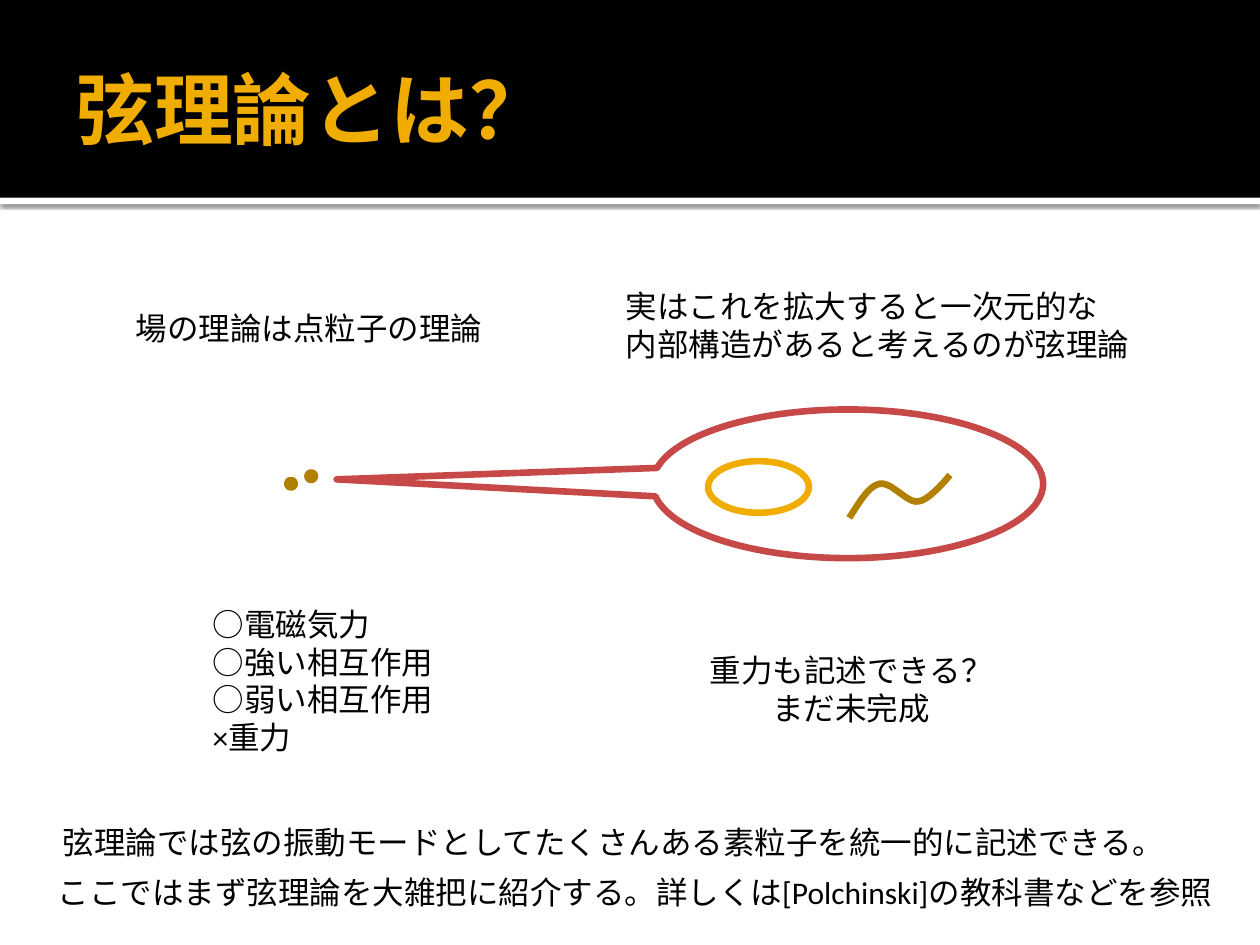
from lxml import etree
from pptx import Presentation, util as u
from pptx.dml.color import RGBColor
from pptx.enum import shapes, text
from pptx.oxml import ns

BLACK = RGBColor(0x00, 0x00, 0x00)
WHITE = RGBColor(0xFF, 0xFF, 0xFF)
GOLD = RGBColor(0xF0, 0xAD, 0x00)
BROWN = RGBColor(0xB2, 0x80, 0x00)
RED = RGBColor(0xC6, 0x48, 0x47)

FONT = "Calibri"
OUTLINE = 3.78
CURVE_STEPS = 10

TITLE = "弦理論とは？"
LEFT, CENTER = text.PP_ALIGN.LEFT, text.PP_ALIGN.CENTER
NOTES = [
    ((0.36, 6.88, 9.48, 0.4), LEFT,
     ["ここではまず弦理論を大雑把に紹介する。詳しくは[Polchinski]の教科書などを参照"]),
    ((0.98, 2.4, 2.98, 0.4), LEFT, ["場の理論は点粒子の理論"]),
    ((1.59, 4.75, 1.97, 1.31), LEFT,
     ["○電磁気力", "○強い相互作用", "○弱い相互作用", "×重力"]),
    ((4.87, 2.23, 4.24, 0.71), LEFT,
     ["実はこれを拡大すると一次元的な", "内部構造があると考えるのが弦理論"]),
    ((5.52, 5.12, 2.47, 0.71), CENTER, ["重力も記述できる？", "まだ未完成"]),
    ((0.4, 6.48, 9.04, 0.4), LEFT,
     ["弦理論では弦の振動モードとしてたくさんある素粒子を統一的に記述できる。"]),
]
PARTICLES = [(2.44, 3.75), (2.28, 3.81)]
PARTICLE_SIZE = 0.06
OPEN_STRING = [
    ((6.74, 4.11), (6.82, 3.99), (6.89, 3.86), (6.98, 3.84)),
    ((6.98, 3.84), (7.08, 3.82), (7.2, 4), (7.29, 3.98)),
    ((7.29, 3.98), (7.38, 3.97), (7.54, 3.77), (7.54, 3.77)),
]


def style(shape, fill, line):
    shape.shadow.inherit = False
    if fill is None:
        shape.fill.background()
    else:
        shape.fill.solid()
        shape.fill.fore_color.rgb = fill
    if line is None:
        shape.line.fill.background()
    else:
        shape.line.color.rgb = line
        shape.line.width = u.Pt(OUTLINE)


def add_figure(page, kind, place, fill, line=None):
    shape = page.shapes.add_shape(kind, *map(u.Inches, place))
    style(shape, fill, line)
    return shape


def add_words(page, place, lines, size=18, color=BLACK, bold=False, align=LEFT):
    box = page.shapes.add_textbox(*map(u.Inches, place))
    frame = box.text_frame
    frame.word_wrap = False
    frame.auto_size = text.MSO_AUTO_SIZE.SHAPE_TO_FIT_TEXT
    for index, line in enumerate(lines):
        para = frame.add_paragraph() if index else frame.paragraphs[0]
        para.alignment = align
        span = para.add_run()
        span.text = line
        span.font.name = FONT
        span.font.size = u.Pt(size)
        span.font.bold = bold
        span.font.color.rgb = color
    return frame


def add_soft_shadow(shape):
    effects = shape.element.spPr.find(ns.qn("a:effectLst"))
    shadow = etree.SubElement(effects, ns.qn("a:outerShdw"), blurRad=str(u.Pt(2.5)),
                              dist=str(u.Pt(0.8)), dir="5400000", rotWithShape="0")
    tint = etree.SubElement(shadow, ns.qn("a:srgbClr"), val=str(BLACK))
    etree.SubElement(tint, ns.qn("a:alpha"), val="60000")


def bezier_point(curve, t):
    weights = ((1 - t) ** 3, 3 * t * (1 - t) ** 2, 3 * t * t * (1 - t), t ** 3)
    return tuple(u.Inches(sum(w * p[axis] for w, p in zip(weights, curve)))
                 for axis in (0, 1))


def add_open_string(page):
    start = bezier_point(OPEN_STRING[0], 0)
    points = [bezier_point(curve, step / CURVE_STEPS)
              for curve in OPEN_STRING for step in range(1, CURVE_STEPS + 1)]
    builder = page.shapes.build_freeform(*start)
    builder.add_line_segments(points, close=False)
    style(builder.convert_to_shape(), None, BROWN)


def main():
    deck = Presentation()
    deck.slide_width, deck.slide_height = u.Inches(10), u.Inches(7.5)
    page = deck.slides.add_slide(deck.slide_layouts[6])
    kinds = shapes.MSO_SHAPE

    rule = add_figure(page, kinds.RECTANGLE, (0, 1.57, 10, 0.05), WHITE)
    add_soft_shadow(rule)
    add_figure(page, kinds.RECTANGLE, (0, 0, 10, 1.57), BLACK)

    callout = add_figure(page, kinds.OVAL_CALLOUT, (5.18, 3.25, 3.1, 1.18), WHITE, RED)
    callout.adjustments[0] = -1.309
    callout.adjustments[1] = -0.03

    heading = add_words(page, (0.5, 0.17, 9, 1.37), [TITLE], 45, GOLD, True)
    heading.auto_size = text.MSO_AUTO_SIZE.NONE
    heading.word_wrap = True
    heading.vertical_anchor = text.MSO_ANCHOR.MIDDLE
    heading.margin_right = u.Inches(0.05)

    for left, top in PARTICLES:
        add_figure(page, kinds.OVAL, (left, top, PARTICLE_SIZE, PARTICLE_SIZE), GOLD, BROWN)
    add_figure(page, kinds.OVAL, (5.62, 3.66, 0.8, 0.41), WHITE, GOLD)
    add_open_string(page)

    for place, align, lines in NOTES:
        add_words(page, place, lines, align=align)

    deck.save("out.pptx")


if __name__ == "__main__":
    main()
